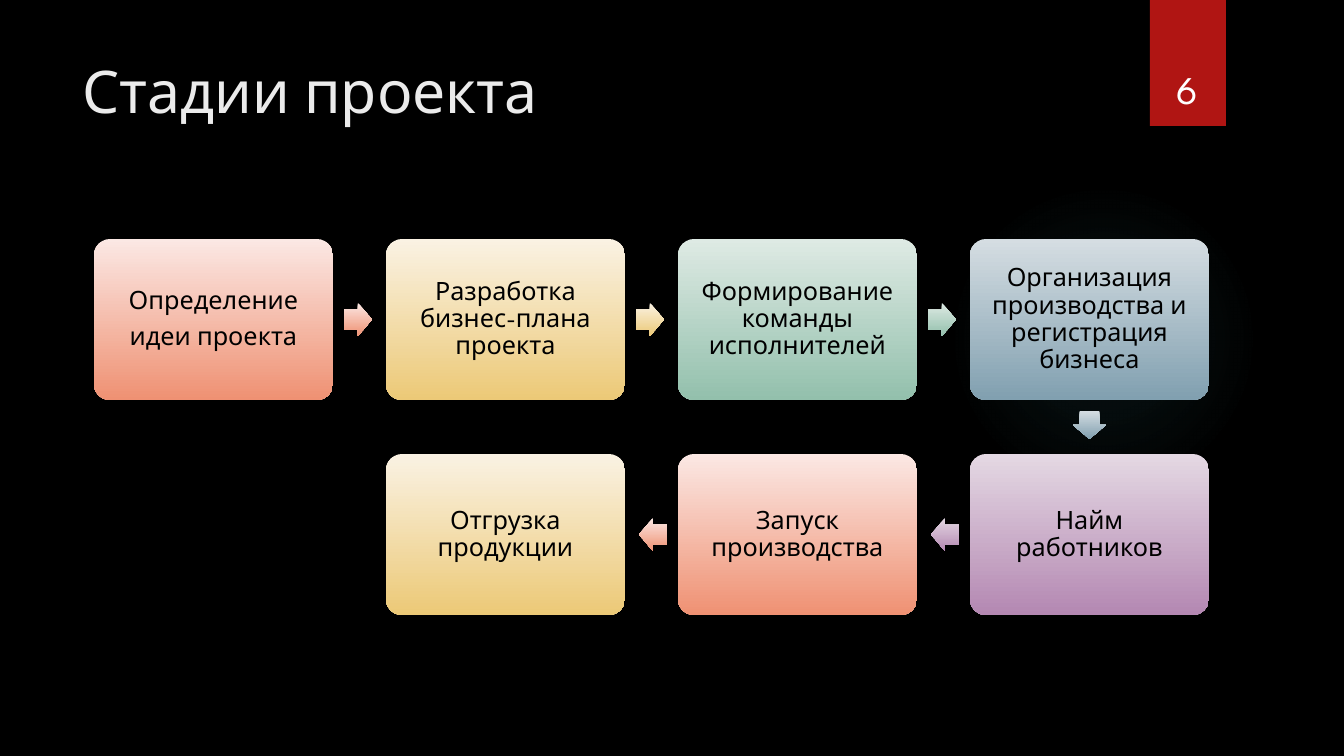
from pptx import Presentation
from pptx import util as u
from pptx.dml.color import RGBColor
from pptx.enum import shapes, text
from pptx.oxml import parse_xml
from pptx.oxml.ns import nsdecls

# Content
TITLE = "Стадии проекта"
PAGE_NUMBER = "6"
FONT = "League Spartan"
COLORS = {"background": "000000", "title": "EBEBEB", "tab": "B01513",
          "number": "FFFFFF", "text": "000000", "glow": "50B9C1"}
GRADIENTS = {
    "red": ("FBE8E4", "EF9173"),
    "yellow": ("FAF2E3", "ECC977"),
    "green": ("DEEAE4", "93C0AC"),
    "blue": ("D5DDE2", "81A0B0"),
    "purple": ("E4D8E3", "B488B2"),
}
# Paragraphs, gradient, column, row
STAGES = [
    (["Определение", "идеи проекта"], "red", 0, 0),
    (["Разработка бизнес-плана проекта"], "yellow", 1, 0),
    (["Формирование команды исполнителей"], "green", 2, 0),
    (["Организация производства и регистрация бизнеса"], "blue", 3, 0),
    (["Найм работников"], "purple", 3, 1),
    (["Запуск производства"], "red", 2, 1),
    (["Отгрузка продукции"], "yellow", 1, 1),
]
GLOW_STOPS = [(0, 7), (36, 6), (69, 0)]  # position and opacity, percent

# Layout in px
PX = 914400 / 100.8
GRID_LEFT, GRID_TOP = 94, 239
BOX_WIDTH, BOX_HEIGHT = 239, 161
COLUMN_STEP, ROW_STEP = 292, 215
ARROW_LENGTH, ARROW_WIDTH, ARROW_GAP = 28, 33, 11
BOX_INSET = 12


def px(value):
    return u.Emu(round(value * PX))


def rgb(name):
    return RGBColor.from_string(COLORS[name])


def add_shape(slide, kind, left, top, width, height):
    shape = slide.shapes.add_shape(kind, px(left), px(top), px(width), px(height))
    shape.shadow.inherit = False
    shape.line.fill.background()
    return shape


def fill_gradient(shape, name):
    shape.fill.gradient()
    shape.fill.gradient_angle = 270
    for stop, color in zip(shape.fill.gradient_stops, GRADIENTS[name]):
        stop.color.rgb = RGBColor.from_string(color)


def format_text(paragraph, size, color, alignment):
    paragraph.alignment = alignment
    for run in paragraph.runs:
        run.font.name = FONT
        run.font.size = u.Pt(size)
        run.font.color.rgb = rgb(color)


def add_glow(slide):
    glow = add_shape(slide, shapes.MSO_SHAPE.OVAL, 949, 184, 310, 310)
    stops = "".join(
        f'<a:gs pos="{position * 1000}"><a:srgbClr val="{COLORS["glow"]}">'
        f'<a:alpha val="{opacity * 1000}"/></a:srgbClr></a:gs>'
        for position, opacity in GLOW_STOPS)
    gradient = parse_xml(
        f'<a:gradFill {nsdecls("a")}><a:gsLst>{stops}</a:gsLst><a:path path="circle">'
        '<a:fillToRect l="50000" t="50000" r="50000" b="50000"/></a:path></a:gradFill>')
    properties = glow.element.spPr
    properties.insert(2, gradient)  # after position and geometry


def add_stage(slide, lines, gradient, column, row):
    box = add_shape(slide, shapes.MSO_SHAPE.ROUNDED_RECTANGLE,
                    GRID_LEFT + column * COLUMN_STEP, GRID_TOP + row * ROW_STEP,
                    BOX_WIDTH, BOX_HEIGHT)
    box.adjustments[0] = 0.1
    fill_gradient(box, gradient)
    frame = box.text_frame
    frame.word_wrap = True
    frame.vertical_anchor = text.MSO_ANCHOR.MIDDLE
    frame.margin_left = frame.margin_right = px(BOX_INSET)
    frame.margin_top = frame.margin_bottom = px(BOX_INSET)
    frame.text = "\n".join(lines)
    for paragraph in frame.paragraphs:
        paragraph.line_spacing = 0.9
        paragraph.space_after = u.Pt(6.3)
        format_text(paragraph, 18, "text", text.PP_ALIGN.CENTER)


def add_arrow(slide, gradient, start, end):
    """Draw the arrow that leaves the start cell towards the end cell."""
    column_move, row_move = end[0] - start[0], end[1] - start[1]
    center_x = GRID_LEFT + start[0] * COLUMN_STEP + BOX_WIDTH / 2
    center_y = GRID_TOP + start[1] * ROW_STEP + BOX_HEIGHT / 2
    reach = ARROW_GAP + ARROW_LENGTH / 2
    center_x += column_move * (BOX_WIDTH / 2 + reach)
    center_y += row_move * (BOX_HEIGHT / 2 + reach)
    if row_move:
        kind, width, height = shapes.MSO_SHAPE.DOWN_ARROW, ARROW_WIDTH, ARROW_LENGTH
    else:
        kind = shapes.MSO_SHAPE.RIGHT_ARROW if column_move > 0 else shapes.MSO_SHAPE.LEFT_ARROW
        width, height = ARROW_LENGTH, ARROW_WIDTH
    arrow = add_shape(slide, kind, center_x - width / 2, center_y - height / 2, width, height)
    arrow.adjustments[0] = 0.6
    arrow.adjustments[1] = 0.5
    fill_gradient(arrow, gradient)


def main():
    presentation = Presentation()
    presentation.slide_width, presentation.slide_height = px(1344), px(756)
    slide = presentation.slides.add_slide(presentation.slide_layouts[5])
    slide.background.fill.solid()
    slide.background.fill.fore_color.rgb = rgb("background")

    # Backdrop
    add_glow(slide)
    tab = add_shape(slide, shapes.MSO_SHAPE.RECTANGLE, 1150, 0, 76, 126)
    tab.fill.solid()
    tab.fill.fore_color.rgb = rgb("tab")

    # Title
    title = slide.shapes.title
    title.left, title.top, title.width, title.height = px(72), px(50), px(1037), px(154)
    title.text_frame.text = TITLE
    title.text_frame.vertical_anchor = text.MSO_ANCHOR.TOP
    format_text(title.text_frame.paragraphs[0], 42, "title", text.PP_ALIGN.LEFT)

    # Stages and the arrows between them
    for index, (lines, gradient, column, row) in enumerate(STAGES):
        add_stage(slide, lines, gradient, column, row)
        if index + 1 < len(STAGES):
            add_arrow(slide, gradient, (column, row), STAGES[index + 1][2:])

    # Page number
    number = slide.shapes.add_textbox(px(1141), px(32), px(93), px(85))
    number.text_frame.word_wrap = True
    number.text_frame.vertical_anchor = text.MSO_ANCHOR.BOTTOM
    number.text_frame.text = PAGE_NUMBER
    format_text(number.text_frame.paragraphs[0], 28, "number", text.PP_ALIGN.CENTER)

    presentation.save("out.pptx")


if __name__ == "__main__":
    main()
